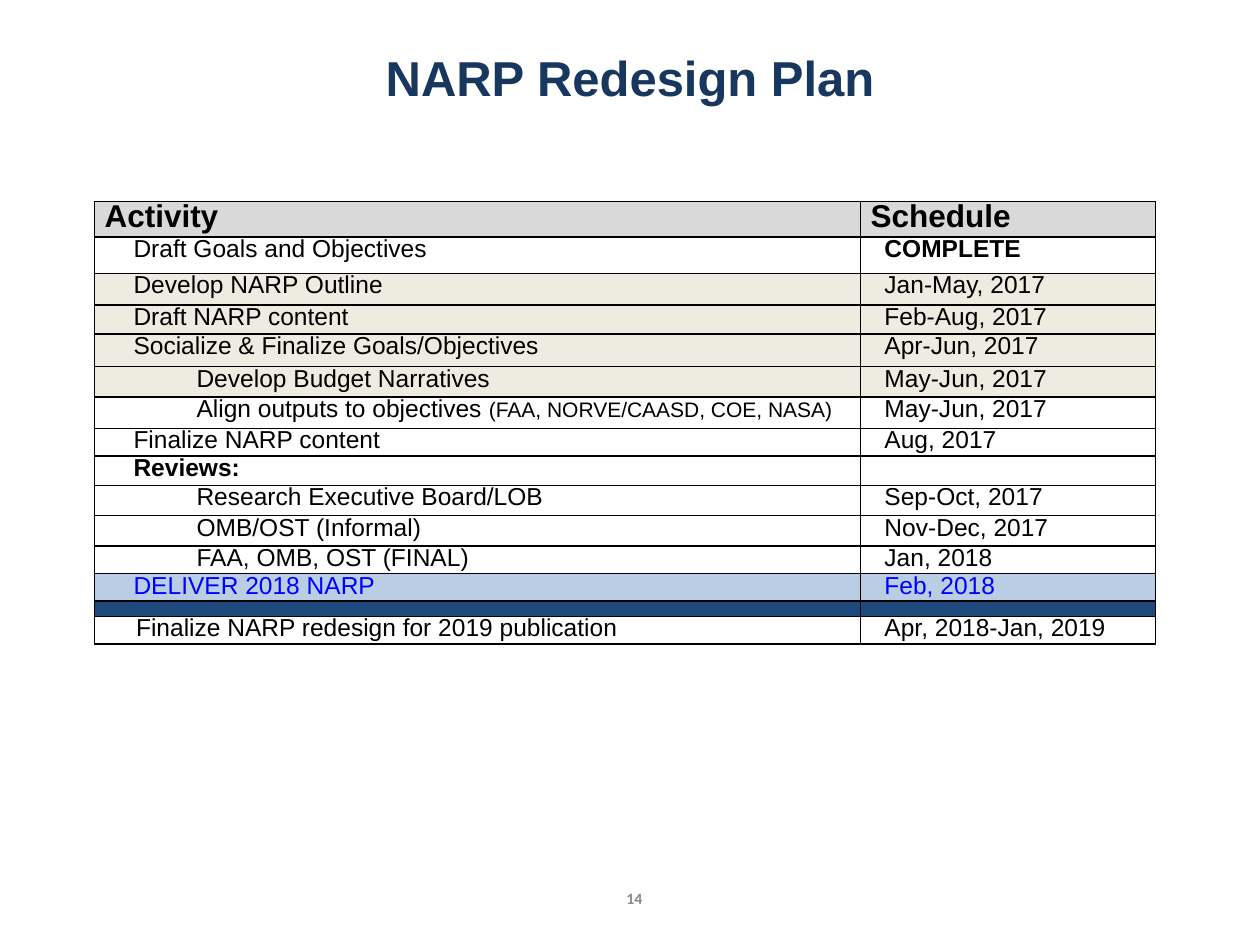
import pptx
import pptx.util
import pptx.dml.color
import pptx.enum.text
import pptx.oxml
import pptx.oxml.ns

Inches = pptx.util.Inches
Pt = pptx.util.Pt
RGBColor = pptx.dml.color.RGBColor
Anchor = pptx.enum.text.MSO_ANCHOR

NAVY = RGBColor(0x17, 0x37, 0x5E)
GRAY = RGBColor(0x89, 0x89, 0x89)
BLACK = RGBColor(0, 0, 0)
BLUE = RGBColor(0, 0, 0xFF)
HEADER_FILL = RGBColor(0xD9, 0xD9, 0xD9)
TAN_FILL = RGBColor(0xEE, 0xEC, 0xE1)
DELIVERY_FILL = RGBColor(0xB9, 0xCD, 0xE5)
DIVIDER_FILL = RGBColor(0x1F, 0x49, 0x7D)

SLIDE_WIDTH, SLIDE_HEIGHT = Inches(10), Inches(7.5)
COLUMN_WIDTHS = (6.08, 2.34)
LINE_SPACING = 0.93
TASK, SUBTASK, FOLLOW_UP, DATE, FLUSH = (0, 0.23), (0.5, 0.23), (0.25, 0), (0, 0.11), (0, 0)

ROWS = [
    (0.28, HEADER_FILL, FLUSH, "Activity", "Schedule"),
    (0.29, None, TASK, "Draft Goals and Objectives", "COMPLETE"),
    (0.25, TAN_FILL, TASK, "Develop NARP Outline", "Jan-May, 2017"),
    (0.23, TAN_FILL, TASK, "Draft NARP content", "Feb-Aug, 2017"),
    (0.26, TAN_FILL, TASK, "Socialize & Finalize Goals/Objectives", "Apr-Jun, 2017"),
    (0.24, TAN_FILL, SUBTASK, "Develop Budget Narratives", "May-Jun, 2017"),
    (0.25, None, SUBTASK, "Align outputs to objectives |(FAA, NORVE/CAASD, COE, NASA)", "May-Jun, 2017"),
    (0.22, None, TASK, "Finalize NARP content", "Aug, 2017"),
    (0.22, None, TASK, "Reviews:", ""),
    (0.24, None, SUBTASK, "Research Executive Board/LOB", "Sep-Oct, 2017"),
    (0.24, None, SUBTASK, "OMB/OST (Informal)", "Nov-Dec, 2017"),
    (0.22, None, SUBTASK, "FAA, OMB, OST (FINAL)", "Jan, 2018"),
    (0.22, DELIVERY_FILL, TASK, "DELIVER 2018 NARP", "Feb, 2018"),
    (0.12, DIVIDER_FILL, FLUSH, "", ""),
    (0.22, None, FOLLOW_UP, "Finalize NARP redesign for 2019 publication", "Apr, 2018-Jan, 2019"),
]
BOLD_TEXTS = {"Activity", "Schedule", "COMPLETE", "Reviews:"}


def style_font(font, name, size, color, bold=False):
    font.name, font.size, font.bold = name, Pt(size), bold
    font.color.rgb = color


def add_centered_text(slide, box, text, name, size, color, anchor):
    shape = slide.shapes.add_textbox(*map(Inches, box))
    frame = shape.text_frame
    frame.word_wrap = True
    frame.vertical_anchor = anchor
    paragraph = frame.paragraphs[0]
    paragraph.text = text
    paragraph.alignment = pptx.enum.text.PP_ALIGN.CENTER
    style_font(paragraph.font, name, size, color, True)


def add_borders(cell):
    properties = cell._tc.get_or_add_tcPr()
    for side in ("lnL", "lnR", "lnT", "lnB"):
        properties.append(pptx.oxml.parse_xml(
            f'<a:{side} {pptx.oxml.ns.nsdecls("a")} w="{Pt(1)}"><a:solidFill>'
            f'<a:srgbClr val="{BLACK}"/></a:solidFill></a:{side}>'))


def fill_cell(cell, text, indent, fill):
    add_borders(cell)
    cell.margin_left = cell.margin_right = Inches(0.08)
    cell.margin_top = cell.margin_bottom = 0
    if fill is None:
        cell.fill.background()
    else:
        cell.fill.solid()
        cell.fill.fore_color.rgb = fill
    paragraph = cell.text_frame.paragraphs[0]
    paragraph.line_spacing = LINE_SPACING
    properties = paragraph._p.get_or_add_pPr()
    properties.set("marL", str(Inches(indent[0])))
    properties.set("indent", str(Inches(indent[1])))
    size = 18 if fill == HEADER_FILL else 6 if fill == DIVIDER_FILL else 14
    color = BLUE if fill == DELIVERY_FILL else BLACK
    style_font(paragraph.font, "Arial", size, color, text in BOLD_TEXTS)
    main_text, _, detail = text.partition("|")
    if main_text:
        paragraph.add_run().text = main_text
    if detail:
        run = paragraph.add_run()
        run.text = detail
        run.font.size = Pt(12)


def add_schedule(slide):
    table = slide.shapes.add_table(
        len(ROWS), len(COLUMN_WIDTHS), Inches(0.75), Inches(1.6),
        Inches(sum(COLUMN_WIDTHS)), Inches(sum(row[0] for row in ROWS))).table
    table.first_row = table.horz_banding = False
    for column, width in zip(table.columns, COLUMN_WIDTHS):
        column.width = Inches(width)
    for index, (height, fill, indent, activity, date) in enumerate(ROWS):
        table.rows[index].height = Inches(height)
        fill_cell(table.cell(index, 0), activity, indent, fill)
        fill_cell(table.cell(index, 1), date, FLUSH if index == 0 else DATE, fill)


def main():
    presentation = pptx.Presentation()
    presentation.slide_width, presentation.slide_height = SLIDE_WIDTH, SLIDE_HEIGHT
    slide = presentation.slides.add_slide(presentation.slide_layouts[6])
    add_centered_text(slide, (0, 0.33, 10, 0.83), "NARP Redesign Plan",
                      "Arial", 28, NAVY, Anchor.TOP)
    add_centered_text(slide, (3.87, 7, 2.33, 0.26), "14",
                      "Calibri", 9, GRAY, Anchor.MIDDLE)
    add_schedule(slide)
    presentation.save("out.pptx")


if __name__ == "__main__":
    main()
